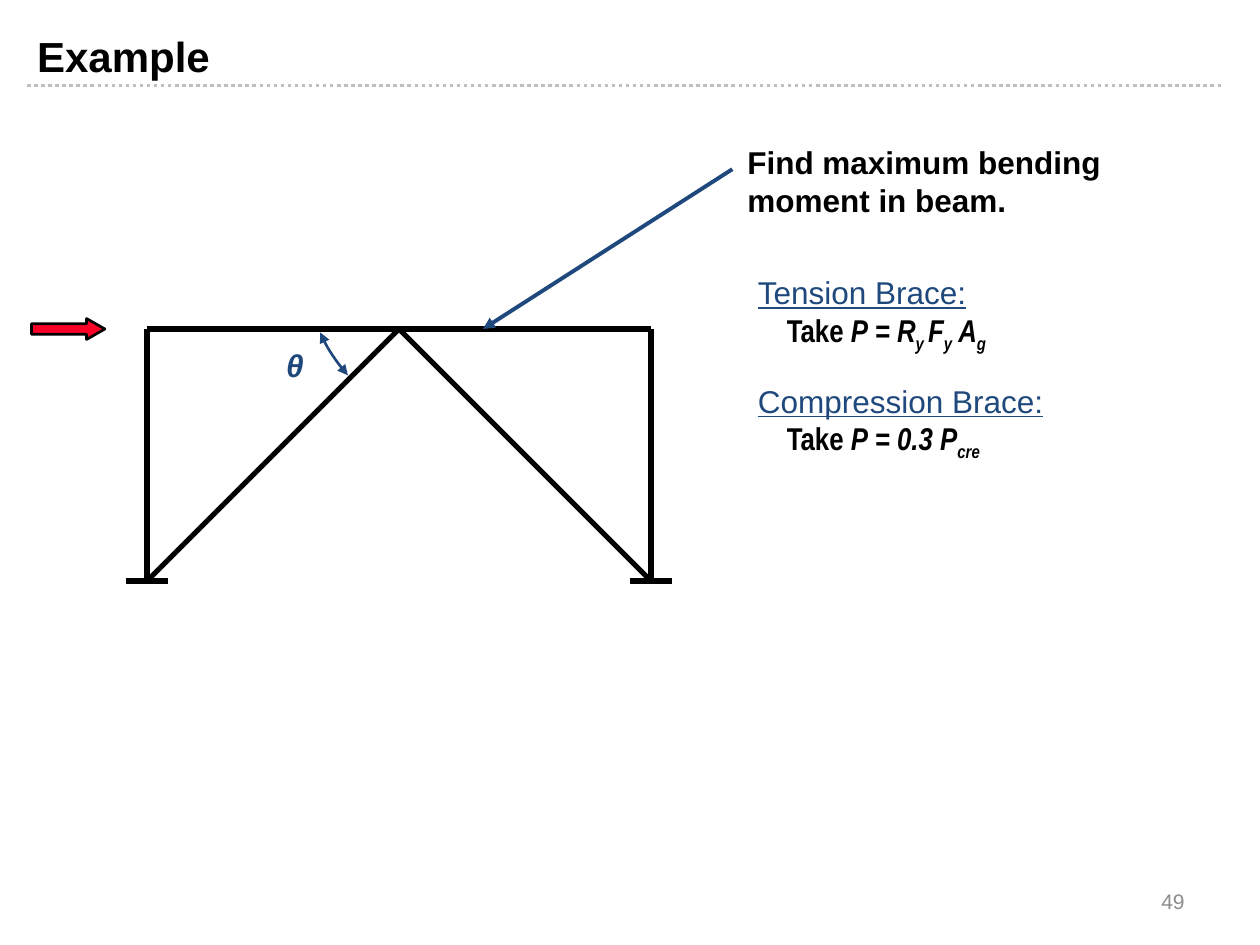
from pptx import Presentation
from pptx.dml.color import RGBColor
from pptx.enum.dml import MSO_LINE
from pptx.enum.shapes import MSO_CONNECTOR, MSO_SHAPE
from pptx.enum.text import MSO_ANCHOR, MSO_AUTO_SIZE, PP_ALIGN
from pptx.oxml.ns import qn
from pptx.util import Pt
from lxml.etree import SubElement

COLORS = {"ink": "000000", "accent": "1F497D", "load": "FC0128",
          "rule": "BFBFBF", "number": "8C8C8C"}
HEADING = {"color": "accent", "underline": True}
PLAIN = {"font": "Arial Narrow", "bold": True}
MATH = {**PLAIN, "italic": True}
SUB = {**MATH, "baseline": -25000}


def rgb(name):
    return RGBColor.from_string(COLORS[name])


def add_arrowheads(shape, ends):
    line = shape.line._get_or_add_ln()
    for end in ends:
        SubElement(line, qn(f"a:{end}"), type="triangle")


def add_line(page, start, end, color="ink", width=3):
    line = page.shapes.add_connector(
        MSO_CONNECTOR.STRAIGHT, *(Pt(value) for value in (*start, *end)))
    line.line.color.rgb = rgb(color)
    line.line.width = Pt(width)
    SubElement(line._element.spPr, qn("a:effectLst"))
    return line


def format_span(span, size=18, color="ink", font="Arial", bold=False,
                italic=False, underline=False, baseline=0):
    span.font.size = Pt(size)
    span.font.name = font
    span.font.color.rgb = rgb(color)
    span.font.bold = bold
    span.font.italic = italic
    span.font.underline = underline
    if baseline:
        span.font._element.set("baseline", str(baseline))


def add_spans(para, spans):
    for text, style in spans:
        span = para.add_run()
        span.text = text
        format_span(span, **style)


def add_text(page, left, top, width, height, spans, align=PP_ALIGN.LEFT):
    box = page.shapes.add_textbox(Pt(left), Pt(top), Pt(width), Pt(height))
    box.text_frame.word_wrap = True
    para = box.text_frame.paragraphs[0]
    para.alignment = align
    add_spans(para, spans)
    return box


def add_header(page, left, top, width, height):
    title = page.shapes.title
    title.left, title.top, title.width, title.height = (
        Pt(value) for value in (left, top, width, height))
    frame = title.text_frame
    frame.text = "Example"
    frame.auto_size = MSO_AUTO_SIZE.NONE
    frame.vertical_anchor = MSO_ANCHOR.TOP
    frame.margin_top = Pt(6)
    frame.paragraphs[0].alignment = PP_ALIGN.LEFT
    format_span(frame.paragraphs[0].runs[0], size=24, bold=True)
    rule_y = top + height + 5.5
    rule = add_line(page, (left + 1.5, rule_y), (left + 685.5, rule_y), "rule", 2)
    rule.line.dash_style = MSO_LINE.ROUND_DOT


def add_angle_mark(page, left, top, width, height):
    controls = [(width, height), (0.6 * width, 0.7 * height),
                (0.24 * width, 0.38 * height), (0, 0)]
    steps = 12
    points = []
    for step in range(steps + 1):
        t = step / steps
        weights = ((1 - t) ** 3, 3 * t * (1 - t) ** 2, 3 * t ** 2 * (1 - t), t ** 3)
        x, y = (sum(w * c for w, c in zip(weights, axis)) for axis in zip(*controls))
        points.append((Pt(left + x), Pt(top + y)))
    builder = page.shapes.build_freeform(*points[0])
    builder.add_line_segments(points[1:], close=False)
    arc = builder.convert_to_shape()
    arc.shadow.inherit = False
    arc.fill.background()
    arc.line.color.rgb = rgb("accent")
    arc.line.width = Pt(1.5)
    add_arrowheads(arc, ("headEnd", "tailEnd"))
    add_text(page, left - 47.5, top + 4.3, 66, 29,
             [("θ", {"color": "accent", "bold": True, "italic": True})],
             PP_ALIGN.CENTER)


def add_braced_frame(page, left, top, width, height):
    right, base, middle = left + width, top + height, left + width / 2
    apex = (middle, top)
    for x in (left, right):
        add_line(page, (x, base), (x, top))
        add_line(page, (x, top), apex)
        add_line(page, (x, base), apex)
        add_line(page, (x - 12, base), (x + 12, base))
    load = page.shapes.add_shape(MSO_SHAPE.RIGHT_ARROW, Pt(left - 66),
                                 Pt(top - 6), Pt(42), Pt(12))
    load.adjustments[0] = 0.5
    load.adjustments[1] = 0.875
    load.shadow.inherit = False
    load.fill.solid()
    load.fill.fore_color.rgb = rgb("load")
    load.line.color.rgb = rgb("ink")
    load.line.width = Pt(1.5)
    add_angle_mark(page, middle - 45, top + 2, 15.8, 24.5)


def add_question(page, left, top, width, height, target):
    add_text(page, left, top, width, height,
             [("Find maximum bending moment in beam.", {"bold": True})])
    pointer = add_line(page, (left - 1.5, top + 18.7), target, "accent", 2.25)
    add_arrowheads(pointer, ("tailEnd",))


def add_brace_rule(page, left, top, width, height, heading, formula):
    box = add_text(page, left, top, width, height, [(heading, HEADING)])
    para = box.text_frame.add_paragraph()
    para._p.get_or_add_pPr().set("marL", str(Pt(16.5)))
    add_spans(para, [("Take ", PLAIN), *formula])


def add_page_number(page, left, top, width, height):
    box = add_text(page, left, top, width, height,
                   [("49", {"size": 12, "color": "number"})], PP_ALIGN.RIGHT)
    box.text_frame.vertical_anchor = MSO_ANCHOR.MIDDLE


def main():
    deck = Presentation()
    deck.slide_width, deck.slide_height = Pt(720), Pt(540)
    page = deck.slides.add_slide(deck.slide_layouts[5])
    add_header(page, 14, 11.5, 646.5, 32)
    add_braced_frame(page, 84, 188, 288, 144)
    add_question(page, 420, 78, 252, 51, (276, 188))
    add_brace_rule(page, 426, 152.5, 192, 51, "Tension Brace:", [
        ("P = R", MATH), ("y ", SUB), ("F", MATH), ("y", SUB),
        (" A", MATH), ("g", SUB)])
    add_brace_rule(page, 426, 214.5, 192, 51, "Compression Brace:", [
        ("P = 0.3 P", MATH), ("cre", SUB)])
    add_page_number(page, 516, 500.5, 168, 29)
    deck.save("out.pptx")


if __name__ == "__main__":
    main()
